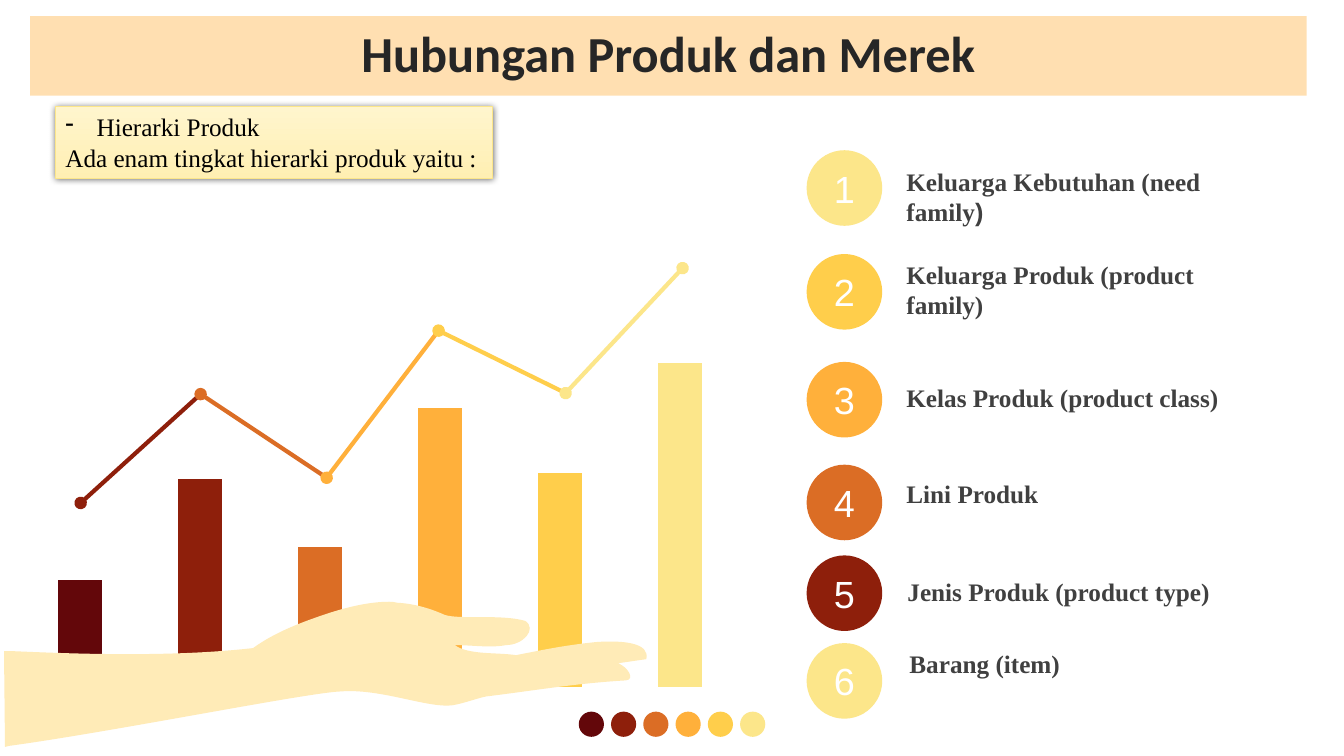
from dataclasses import dataclass
from itertools import pairwise

from lxml.etree import SubElement
from pptx import Presentation
from pptx.chart.data import CategoryChartData
from pptx.dml.color import RGBColor
from pptx.enum.chart import XL_CHART_TYPE as ChartType
from pptx.enum.shapes import MSO_CONNECTOR as Connector
from pptx.enum.shapes import MSO_SHAPE as Preset
from pptx.enum.text import MSO_ANCHOR as Anchor
from pptx.enum.text import MSO_AUTO_SIZE as AutoSize
from pptx.enum.text import PP_ALIGN as Align
from pptx.oxml.ns import qn
from pptx.util import Inches, Pt


@dataclass(frozen=True)
class Theme:
    palette: tuple = ("63070A", "8E1F0B", "DB6D25", "FFB03B", "FFCE4B", "FCE68A")
    banner: str = "FFDFB1"
    hand: str = "FFEBB7"
    callout_top: str = "FFF5CD"
    callout_bottom: str = "FFEFB3"
    title_ink: str = "262626"
    label_ink: str = "404040"
    black: str = "000000"
    white: str = "FFFFFF"
    title_font: str = "Calibri"
    label_font: str = "Times New Roman"
    number_font: str = "Arial"
    title_size: int = 36
    label_size: int = 18
    number_size: int = 27


THEME = Theme()
BAR_VALUES = (33, 64, 43, 86, 66, 100)
TREND_POINTS = ((0.8, 4.99), (1.99, 3.91), (3.24, 4.74),
                (4.35, 3.28), (5.61, 3.9), (6.77, 2.66))
LEVELS = (
    ("Keluarga Kebutuhan (need family", 1.49, 8.87, 1.6, 0.71),
    ("Keluarga Produk (product family)", 2.52, 8.87, 2.52, 0.71),
    ("Kelas Produk (product class)", 3.59, 8.87, 3.74, 0.4),
    ("Lini Produk", 4.61, 8.87, 4.7, 0.4),
    ("Jenis Produk (product type)", 5.51, 8.88, 5.67, 0.4),
    ("Barang (item)", 6.38, 8.9, 6.38, 0.4),
)
HAND_START = (3.86, 5.97)
HAND_SEGMENTS = (
    (3.88, 5.97, 3.91, 5.97, 3.94, 5.98), (4.13, 5.99, 4.3, 6.05, 4.41, 6.1),
    (4.56, 6.15, 4.96, 6.09, 5.21, 6.16), (5.33, 6.24, 5.19, 6.4, 5.02, 6.4),
    (4.87, 6.43, 4.68, 6.4, 4.51, 6.4), (4.65, 6.5, 4.92, 6.47, 5.12, 6.5),
    (5.42, 6.44, 5.62, 6.4, 5.91, 6.37), (6.19, 6.35, 6.45, 6.38, 6.41, 6.54),
    (6.13, 6.58),
    (6.23, 6.62, 6.3, 6.74, 6.21, 6.75), (5.7, 6.78, 5.31, 6.85, 4.82, 6.91),
    (4.72, 6.93, 4.54, 7, 4.45, 7), (4.2, 7.01, 3.76, 6.83, 3.38, 6.86),
    (3.06, 6.87, 1.12, 7.26, 0.09, 7.4),
    (0.05, 7.41), (0.04, 6.46), (0.12, 6.46),
    (0.79, 6.49, 1.71, 6.52, 2.51, 6.43), (2.73, 6.27, 3, 6.17, 3.24, 6.09),
    (3.45, 6.02, 3.67, 5.97, 3.86, 5.97),
)


def rgb(value):
    return RGBColor.from_string(value)


def style_font(font, name, size, color, bold=False):
    font.name = name
    font.size = Pt(size)
    font.bold = bold
    font.color.rgb = rgb(color)


def paint(shape, color):
    shape.fill.solid()
    shape.fill.fore_color.rgb = rgb(color)
    shape.line.fill.background()
    shape.shadow.inherit = False


def add_title(page, text):
    title = page.shapes.title
    title.left, title.top = Inches(0.3), Inches(0.16)
    title.width, title.height = Inches(12.66), Inches(0.79)
    title.fill.solid()
    title.fill.fore_color.rgb = rgb(THEME.banner)
    frame = title.text_frame
    frame.text = text
    frame.auto_size = AutoSize.NONE
    frame.vertical_anchor = Anchor.MIDDLE
    para = frame.paragraphs[0]
    para.alignment = Align.CENTER
    para.line_spacing = 0.9
    style_font(para.runs[0].font, THEME.title_font, THEME.title_size,
               THEME.title_ink, True)


def add_disc(parent, left, top, size, color):
    disc = parent.shapes.add_shape(Preset.OVAL, Inches(left), Inches(top),
                                   Inches(size), Inches(size))
    paint(disc, color)
    return disc


def add_number(page, number, top, color):
    frame = add_disc(page, 8, top, 0.75, color).text_frame
    frame.text = str(number)
    frame.vertical_anchor = Anchor.MIDDLE
    para = frame.paragraphs[0]
    para.alignment = Align.CENTER
    style_font(para.runs[0].font, THEME.number_font, THEME.number_size, THEME.white)


def add_label(page, text, left, top, height):
    box = page.shapes.add_textbox(Inches(left), Inches(top),
                                  Inches(3.75), Inches(height))
    frame = box.text_frame
    frame.word_wrap = True
    frame.auto_size = AutoSize.SHAPE_TO_FIT_TEXT
    frame.margin_left = frame.margin_right = Inches(0.12)
    frame.text = text
    para = frame.paragraphs[0]
    style_font(para.runs[0].font, THEME.label_font, THEME.label_size,
               THEME.label_ink, True)
    return para


def add_bar_chart(page):
    data = CategoryChartData()
    data.categories = [str(number + 1) for number in range(len(BAR_VALUES))]
    data.add_series("Series 1", BAR_VALUES)
    chart = page.shapes.add_chart(ChartType.COLUMN_CLUSTERED, Inches(0.05), Inches(2.12),
                                  Inches(7.44), Inches(4.79), data).chart
    chart.has_legend = chart.has_title = False
    style_font(chart.font, THEME.number_font, THEME.label_size, THEME.black)
    chart.category_axis.visible = chart.value_axis.visible = False
    chart.value_axis.has_major_gridlines = False
    chart.value_axis.minimum_scale = 0
    chart.value_axis.maximum_scale = 143
    plot = chart.plots[0]
    plot.gap_width = 170
    plot.vary_by_categories = False
    series = plot.series[0]
    formats = [series.format] + [series.points[index].format for index in range(1, 6)]
    for part, color in zip(formats, THEME.palette):
        part.fill.solid()
        part.fill.fore_color.rgb = rgb(color)


def add_trend_line(parent, start, end, color, ends):
    points = [Inches(value) for value in (*start, *end)]
    segment = parent.shapes.add_connector(Connector.STRAIGHT, *points)
    segment.line.color.rgb = rgb(color)
    segment.line.width = Pt(3)
    outline = segment.line._get_or_add_ln()
    for end_name in ends:
        SubElement(outline, qn(f"a:{end_name}"), type="oval")
    SubElement(segment._element.spPr, qn("a:effectLst"))


def add_hand(page):
    anchors = [(Inches(part[-2]), Inches(part[-1])) for part in HAND_SEGMENTS]
    builder = page.shapes.build_freeform(Inches(HAND_START[0]), Inches(HAND_START[1]))
    builder.add_line_segments(anchors, close=True)
    hand = builder.convert_to_shape()
    paint(hand, THEME.hand)
    lines = list(hand._element.iter(qn("a:lnTo")))
    for line, segment in zip(lines, HAND_SEGMENTS):
        if len(segment) == 6:
            line.tag = qn("a:cubicBezTo")
            line.clear()
            for x, y in zip(segment[::2], segment[1::2]):
                SubElement(line, qn("a:pt"), x=str(Inches(x) - hand.left),
                           y=str(Inches(y) - hand.top))


def add_callout(page, lines):
    box = page.shapes.add_shape(Preset.RECTANGLE, Inches(0.55), Inches(1.06),
                                Inches(4.33), Inches(0.71))
    box.fill.gradient()
    box.fill.gradient_angle = 270
    for stop, color in zip(box.fill.gradient_stops,
                           (THEME.callout_top, THEME.callout_bottom)):
        stop.color.rgb = rgb(color)
    box.line.color.rgb = rgb(THEME.palette[-1])
    box.line.width = Pt(0.5)
    box.shadow.inherit = False
    effects = box._element.spPr.find(qn("a:effectLst"))
    shadow = SubElement(effects, qn("a:outerShdw"), blurRad=str(Pt(5)), dist="0")
    tint = SubElement(shadow, qn("a:srgbClr"), val=THEME.black)
    SubElement(tint, qn("a:alpha"), val="60000")
    frame = box.text_frame
    frame.text = "\n".join(lines)
    frame.word_wrap = False
    frame.auto_size = AutoSize.SHAPE_TO_FIT_TEXT
    frame.vertical_anchor = Anchor.TOP
    for para in frame.paragraphs:
        para.alignment = Align.LEFT
        style_font(para.runs[0].font, THEME.label_font, THEME.label_size, THEME.black)
    bullet = frame.paragraphs[0]._p.get_or_add_pPr()
    bullet.set("marL", str(Inches(0.31)))
    bullet.set("indent", str(-Inches(0.31)))
    SubElement(bullet, qn("a:buFontTx"))
    SubElement(bullet, qn("a:buChar"), char="-")


def main():
    deck = Presentation()
    deck.slide_width, deck.slide_height = Inches(13.33), Inches(7.5)
    page = deck.slides.add_slide(deck.slide_layouts[5])
    dots = page.shapes.add_group_shape()
    for index, color in enumerate(THEME.palette):
        add_disc(dots, 5.74 + 0.32 * index, 7.06, 0.25, color)
    add_bar_chart(page)
    add_title(page, "Hubungan Produk dan Merek")
    trend = page.shapes.add_group_shape()
    segments = list(pairwise(TREND_POINTS))
    for index, (start, end) in enumerate(segments):
        last = index == len(segments) - 1
        ends = ("headEnd", "tailEnd") if last else ("headEnd",)
        add_trend_line(trend, start, end, THEME.palette[index + 1], ends)
    add_hand(page)
    number_colors = (*THEME.palette[:0:-1], THEME.palette[-1])
    labels = []
    for number, (level, color) in enumerate(zip(LEVELS, number_colors), 1):
        text, disc_top, *place = level
        add_number(page, number, disc_top, color)
        labels.append(add_label(page, text, *place))
    bracket = labels[0].add_run()
    bracket.text = ")"
    style_font(bracket.font, THEME.number_font, THEME.label_size, THEME.label_ink, True)
    add_callout(page, ("Hierarki Produk", "Ada enam tingkat hierarki produk yaitu :"))
    deck.save("out.pptx")


if __name__ == "__main__":
    main()
